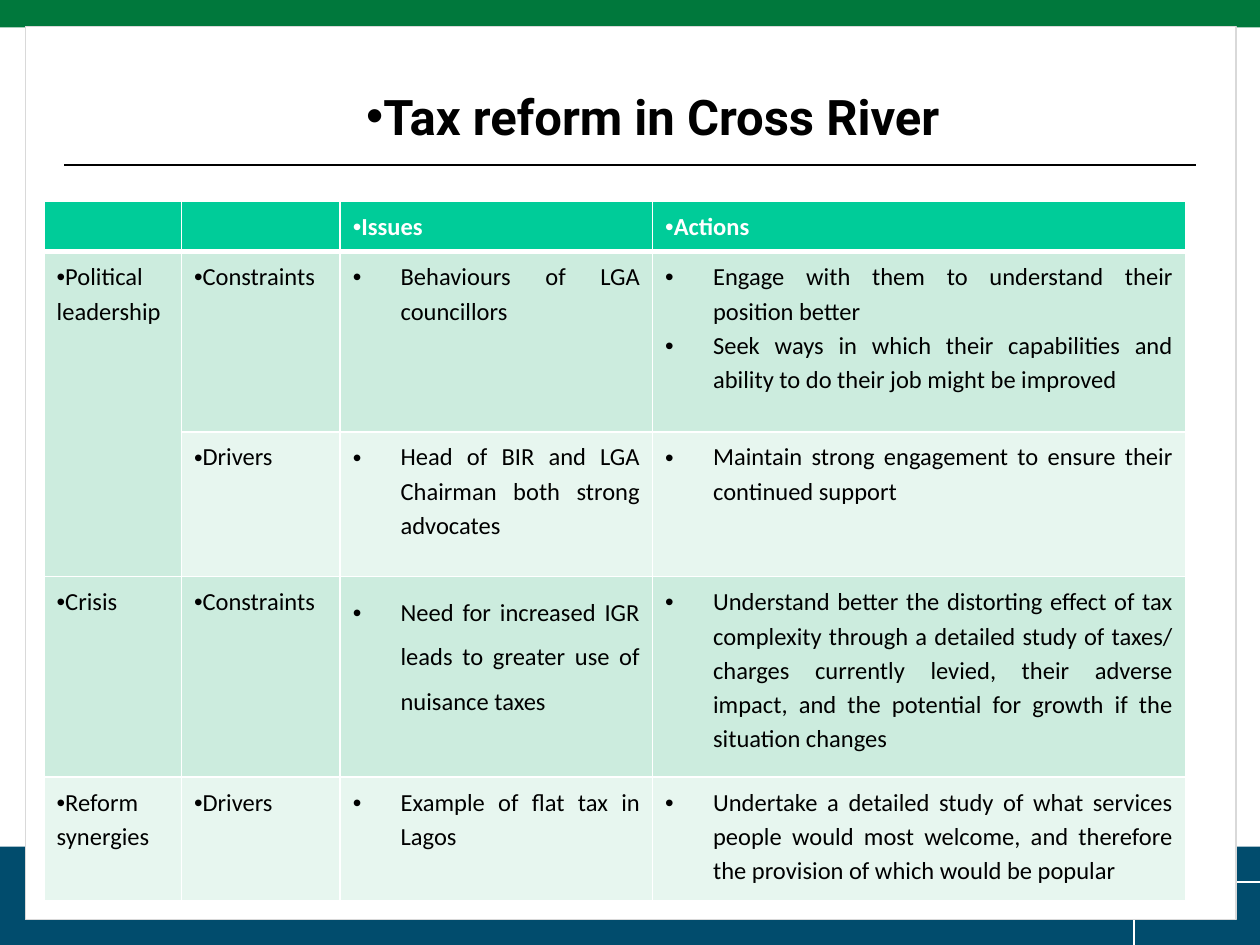
from dataclasses import dataclass

from lxml.etree import SubElement
from pptx import Presentation
from pptx.dml.color import RGBColor
from pptx.enum.shapes import MSO_CONNECTOR as Connector, MSO_SHAPE as Shape
from pptx.enum.text import MSO_AUTO_SIZE as AutoSize, PP_ALIGN as Align
from pptx.oxml import parse_xml
from pptx.oxml.ns import nsdecls, qn
from pptx.util import Inches, Pt


@dataclass(frozen=True)
class Theme:
    white: str = "FFFFFF"
    black: str = "000000"
    green: str = "00783C"
    navy: str = "014C6D"
    frame: str = "D9D9D9"
    header: str = "00CC99"
    bands: tuple = ("CCECDE", "E7F6EF")
    title_font: str = "Roboto"
    body_font: str = "Calibri"
    title_size: int = 28
    body_size: int = 14


@dataclass(frozen=True)
class Box:
    left: float
    top: float
    width: float
    height: float

    def inner(self, x, y, w, h):
        return Box(self.left + x * self.width, self.top + y * self.height,
                   w * self.width, h * self.height)

    def point(self, x, y):
        return self.left + x * self.width, self.top + y * self.height

    def emu(self):
        return [Inches(v) for v in (self.left, self.top, self.width, self.height)]


THEME = Theme()
PAGE = Box(0, 0, 10, 7.5)
COLUMNS = (1.09, 1.26, 2.48, 4.23)
ROWS = (0.4, 1.43, 1.15, 1.59, 0.98)
HANGING = 0.38
CONTENT = (
    ((), (), ("Issues ",), ("Actions ",)),
    (("Political leadership ",), ("Constraints ",), ("Behaviours of LGA councillors ",),
     ("Engage with them to understand their position better ",
      "Seek ways in which their capabilities and ability to do their job might be improved")),
    ((), ("Drivers ",), ("Head of BIR and LGA Chairman both strong advocates ",),
     ("Maintain strong engagement to ensure their continued support ",)),
    (("Crisis ",), ("Constraints ",),
     ("Need for increased IGR leads to greater use of nuisance taxes",),
     ("Understand better the distorting effect of tax complexity through a detailed study "
      "of taxes/ charges currently levied, their adverse impact, and the potential for "
      "growth if the situation changes",)),
    (("Reform synergies ",), ("Drivers ",), ("Example of flat tax in Lagos ",),
     ("Undertake a detailed study of what services people would most welcome, and "
      "therefore the provision of which would be popular",)),
)
ROW_BANDS = (0, 1, 0, 1)
LOOSE_CELL = (3, 2)


def rgb(value):
    return RGBColor.from_string(value)


def add_panel(slide, box, fill, outline=None):
    panel = slide.shapes.add_shape(Shape.RECTANGLE, *box.emu())
    panel.shadow.inherit = False
    panel.fill.solid()
    panel.fill.fore_color.rgb = rgb(fill)
    if outline:
        panel.line.color.rgb = rgb(outline)
        panel.line.width = Pt(0.75)
    else:
        panel.line.fill.background()


def bezier(start, first, second, end, steps=24):
    for step in range(steps + 1):
        t = step / steps
        weights = ((1 - t) ** 3, 3 * t * (1 - t) ** 2, 3 * t * t * (1 - t), t ** 3)
        yield tuple(sum(w * p[axis] for w, p in zip(weights, (start, first, second, end)))
                    for axis in (0, 1))


def add_arc(slide, box, controls):
    start, *rest = bezier(*(box.point(*control) for control in controls))
    builder = slide.shapes.build_freeform(*start, scale=Inches(1))
    builder.add_line_segments(rest, close=False)
    arc = builder.convert_to_shape()
    arc.shadow.inherit = False
    arc.fill.background()
    arc.line.color.rgb = rgb(THEME.white)
    arc.line.width = Pt(1.5)


def add_background(slide, box):
    add_panel(slide, box.inner(0, 0.896, 1, 0.104), THEME.navy)
    add_panel(slide, box.inner(0, 0, 1, 0.029), THEME.green)
    arcs = box.inner(0.892, 0.895, 0.108, 0.105)
    add_arc(slide, arcs, ((0.63, 0), (0.35, 0.18), (0.12, 0.54), (0, 1)))
    add_arc(slide, arcs, ((1, 0.06), (0.7, 0.18), (0.47, 0.53), (0.33, 1)))
    add_arc(slide, arcs, ((0.47, 0), (0.34, 0.28), (0.24, 0.63), (0.2, 1)))
    add_panel(slide, box.inner(0.02, 0.028, 0.961, 0.945), THEME.white, THEME.frame)


def write_bullet(paragraph, text, font, size, color, bold, align, hanging=0):
    properties = paragraph._p.get_or_add_pPr()
    properties.set("marL", str(Inches(hanging)))
    properties.set("indent", str(-Inches(hanging)))
    SubElement(properties, qn("a:buFont")).set("typeface", "Arial")
    SubElement(properties, qn("a:buChar")).set("char", "•")
    paragraph.text = text
    paragraph.alignment = align
    paragraph.font.name = font
    paragraph.font.size = Pt(size)
    paragraph.font.bold = bold
    paragraph.font.color.rgb = rgb(color)


def add_heading(slide, box):
    title = slide.shapes.add_textbox(*box.inner(0.1, 0, 0.851, 0.85).emu())
    title.text_frame.word_wrap = True
    title.text_frame.auto_size = AutoSize.SHAPE_TO_FIT_TEXT
    write_bullet(title.text_frame.paragraphs[0], "Tax reform in Cross River ",
                 THEME.title_font, THEME.title_size, THEME.black, True, Align.CENTER)
    ends = [Inches(v) for v in (*box.point(0, 1), *box.point(1, 1))]
    rule = slide.shapes.add_connector(Connector.STRAIGHT, *ends)
    rule.line.color.rgb = rgb(THEME.black)
    rule.line.width = Pt(1.25)
    SubElement(rule._element.spPr, qn("a:effectLst"))


def set_borders(cell, row):
    properties = cell._tc.get_or_add_tcPr()
    heavy = {0: "B", 1: "T"}.get(row)
    for position, side in enumerate("LRTB"):
        width = Pt(3 if side == heavy else 1)
        properties.insert(position, parse_xml(
            f'<a:ln{side} {nsdecls("a")} w="{width}"><a:solidFill>'
            f'<a:srgbClr val="{THEME.white}"/></a:solidFill></a:ln{side}>'))


def fill_cell(cell, row, column, texts):
    is_header = row == 0
    cell.fill.solid()
    cell.fill.fore_color.rgb = rgb(
        THEME.header if is_header else THEME.bands[ROW_BANDS[row - 1]])
    set_borders(cell, row)
    frame = cell.text_frame
    if not texts:
        frame.paragraphs[0].font.size = Pt(THEME.body_size)
    for index, text in enumerate(texts):
        paragraph = frame.add_paragraph() if index else frame.paragraphs[0]
        write_bullet(paragraph, text, THEME.body_font, THEME.body_size,
                     THEME.white if is_header else THEME.black, is_header, Align.JUSTIFY,
                     HANGING if row and column > 1 else 0)
        paragraph.line_spacing = 1.5 if (row, column) == LOOSE_CELL else 1.15


def add_reform_table(slide, box):
    reforms = slide.shapes.add_table(len(ROWS), len(COLUMNS), *box.emu()).table
    for column, share in zip(reforms.columns, COLUMNS):
        column.width = Inches(box.width * share / sum(COLUMNS))
    for row, share in zip(reforms.rows, ROWS):
        row.height = Inches(box.height * share / sum(ROWS))
    for r, entries in enumerate(CONTENT):
        for c, texts in enumerate(entries):
            fill_cell(reforms.cell(r, c), r, c, texts)
    reforms.cell(1, 0).merge(reforms.cell(2, 0))


def main():
    deck = Presentation()
    deck.slide_width, deck.slide_height = Inches(PAGE.width), Inches(PAGE.height)
    slide = deck.slides.add_slide(deck.slide_layouts[6])
    add_background(slide, PAGE)
    add_heading(slide, PAGE.inner(0.051, 0.085, 0.898, 0.09))
    add_reform_table(slide, PAGE.inner(0.035, 0.213, 0.906, 0.74))
    deck.save("out.pptx")


if __name__ == "__main__":
    main()
